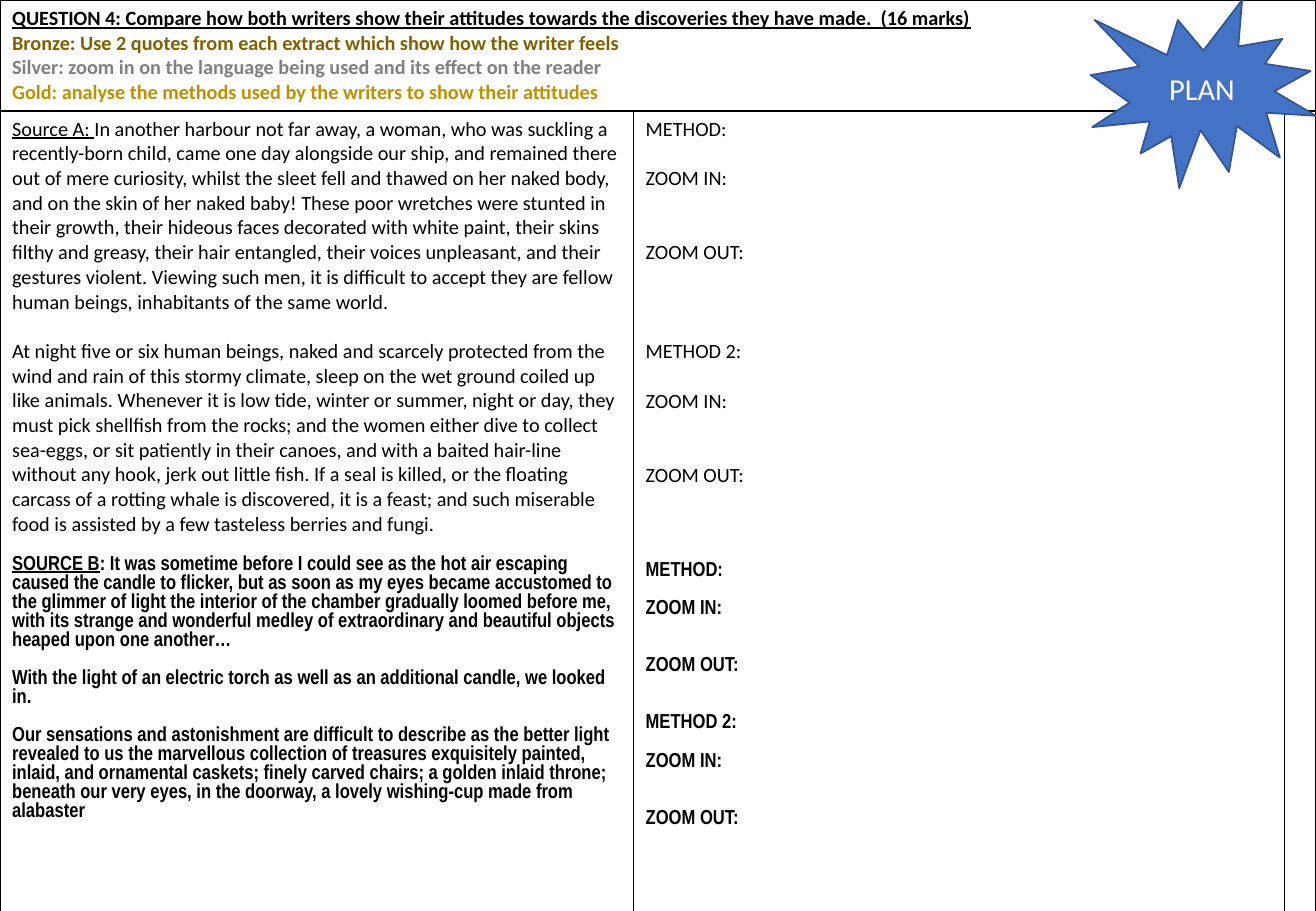
from lxml import etree
from pptx import Presentation
from pptx.dml.color import RGBColor
from pptx.enum.shapes import MSO_SHAPE
from pptx.enum.text import MSO_ANCHOR, PP_ALIGN
from pptx.oxml.ns import qn
from pptx.util import Pt

STARBURST = MSO_SHAPE.EXPLOSION1
MIDDLE = MSO_ANCHOR.MIDDLE
CENTER = PP_ALIGN.CENTER

BLACK = RGBColor(0x00, 0x00, 0x00)
WHITE = RGBColor(0xFF, 0xFF, 0xFF)
BRONZE = RGBColor(0x80, 0x60, 0x00)
SILVER = RGBColor(0x80, 0x80, 0x80)
GOLD = RGBColor(0xBF, 0x90, 0x00)
BLUE = RGBColor(0x44, 0x72, 0xC4)
DARK_BLUE = RGBColor(0x32, 0x54, 0x91)

CALIBRI = "Calibri"
NARROW = "Arial Narrow"
LINE_HEIGHT = {CALIBRI: 14.65, NARROW: 11.3}


def add_paragraph(cell, underlined, plain, font, bold, colour=BLACK, gap=0):
    frame = cell.text_frame
    paragraph = frame.paragraphs[0] if not cell.text else frame.add_paragraph()
    paragraph.space_before = Pt(gap)
    for text, underline in ((underlined, True), (plain, False)):
        if text:
            run = paragraph.add_run()
            run.text = text
            run.font.name = font
            run.font.size = Pt(12)
            run.font.bold = bold
            run.font.underline = underline
            run.font.color.rgb = colour


def style_cell(cell):
    properties = cell._tc.get_or_add_tcPr()
    for side in ("a:lnL", "a:lnR", "a:lnT", "a:lnB"):
        border = etree.SubElement(properties, qn(side), w=str(Pt(1)))
        fill = etree.SubElement(border, qn("a:solidFill"))
        etree.SubElement(fill, qn("a:srgbClr"), val=str(BLACK))
    cell.fill.solid()
    cell.fill.fore_color.rgb = WHITE


prs = Presentation()
prs.slide_width = Pt(779.8)
prs.slide_height = Pt(540)
slide = prs.slides.add_slide(prs.slide_layouts[6])

plan_table = slide.shapes.add_table(2, 3, Pt(0), Pt(0), Pt(779.8), Pt(605)).table
plan_table.first_row = False
plan_table.horz_banding = False
for column, width in zip(plan_table.columns, (375.4, 385.7, 18.7)):
    column.width = Pt(width)
for row, height in zip(plan_table.rows, (65.8, 539.2)):
    row.height = Pt(height)
for cell in plan_table.iter_cells():
    style_cell(cell)

question = plan_table.cell(0, 0)
question.merge(plan_table.cell(0, 2))
question.vertical_anchor = MIDDLE
add_paragraph(
    question,
    "QUESTION 4: Compare how both writers show their attitudes towards the discoveries they have made.  (16 marks)",
    "", CALIBRI, True)
for challenge, colour in (
    ("Bronze: Use 2 quotes from each extract which show how the writer feels", BRONZE),
    ("Silver: zoom in on the language being used and its effect on the reader", SILVER),
    ("Gold: analyse the methods used by the writers to show their attitudes", GOLD),
):
    add_paragraph(question, "", challenge, CALIBRI, True, colour)

extracts = [
    ("Source A: ",
     "In another harbour not far away, a woman, who was suckling a recently-born child, came one day "
     "alongside our ship, and remained there out of mere curiosity, whilst the sleet fell and thawed on "
     "her naked body, and on the skin of her naked baby! These poor wretches were stunted in their growth, "
     "their hideous faces decorated with white paint, their skins filthy and greasy, their hair entangled, "
     "their voices unpleasant, and their gestures violent. Viewing such men, it is difficult to accept they "
     "are fellow human beings, inhabitants of the same world.", CALIBRI),
    ("",
     "At night five or six human beings, naked and scarcely protected from the wind and rain of this stormy "
     "climate, sleep on the wet ground coiled up like animals. Whenever it is low tide, winter or summer, "
     "night or day, they must pick shellfish from the rocks; and the women either dive to collect sea-eggs, "
     "or sit patiently in their canoes, and with a baited hair-line without any hook, jerk out little fish. "
     "If a seal is killed, or the floating carcass of a rotting whale is discovered, it is a feast; and such "
     "miserable food is assisted by a few tasteless berries and fungi.", CALIBRI),
    ("SOURCE B",
     ": It was sometime before I could see as the hot air escaping caused the candle to flicker, but as soon "
     "as my eyes became accustomed to the glimmer of light the interior of the chamber gradually loomed "
     "before me, with its strange and wonderful medley of extraordinary and beautiful objects heaped upon "
     "one another…", NARROW),
    ("",
     "With the light of an electric torch as well as an additional candle, we looked in.", NARROW),
    ("",
     "Our sensations and astonishment are difficult to describe as the better light revealed to us the "
     "marvellous collection of treasures exquisitely painted, inlaid, and ornamental caskets; finely carved "
     "chairs; a golden inlaid throne; beneath our very eyes, in the doorway, a lovely wishing-cup made from "
     "alabaster", NARROW),
]
sources = plan_table.cell(1, 0)
for number, (label, extract, font) in enumerate(extracts):
    gap = LINE_HEIGHT[font] if number else 0
    add_paragraph(sources, label, extract, font, font == NARROW, gap=gap)

prompts = plan_table.cell(1, 1)
for font, method, gap in (
    (CALIBRI, "METHOD:", 0),
    (CALIBRI, "METHOD 2:", 3 * LINE_HEIGHT[CALIBRI]),
    (NARROW, "METHOD:", 3 * LINE_HEIGHT[CALIBRI]),
    (NARROW, "METHOD 2:", 2 * LINE_HEIGHT[NARROW]),
):
    line = LINE_HEIGHT[font]
    for prompt, space in ((method, gap), ("ZOOM IN:", line), ("ZOOM OUT:", 2 * line)):
        add_paragraph(prompts, "", prompt, font, font == NARROW, gap=space)

plan = slide.shapes.add_shape(STARBURST, Pt(646.4), Pt(0), Pt(133.4), Pt(111.6))
plan.shadow.inherit = False
plan.fill.solid()
plan.fill.fore_color.rgb = BLUE
plan.line.color.rgb = DARK_BLUE
plan.line.width = Pt(1)
plan.text_frame.text = "PLAN"
plan.text_frame.vertical_anchor = MIDDLE
plan_label = plan.text_frame.paragraphs[0]
plan_label.alignment = CENTER
plan_label.font.name = CALIBRI
plan_label.font.size = Pt(18)
plan_label.font.color.rgb = WHITE

prs.save("out.pptx")
